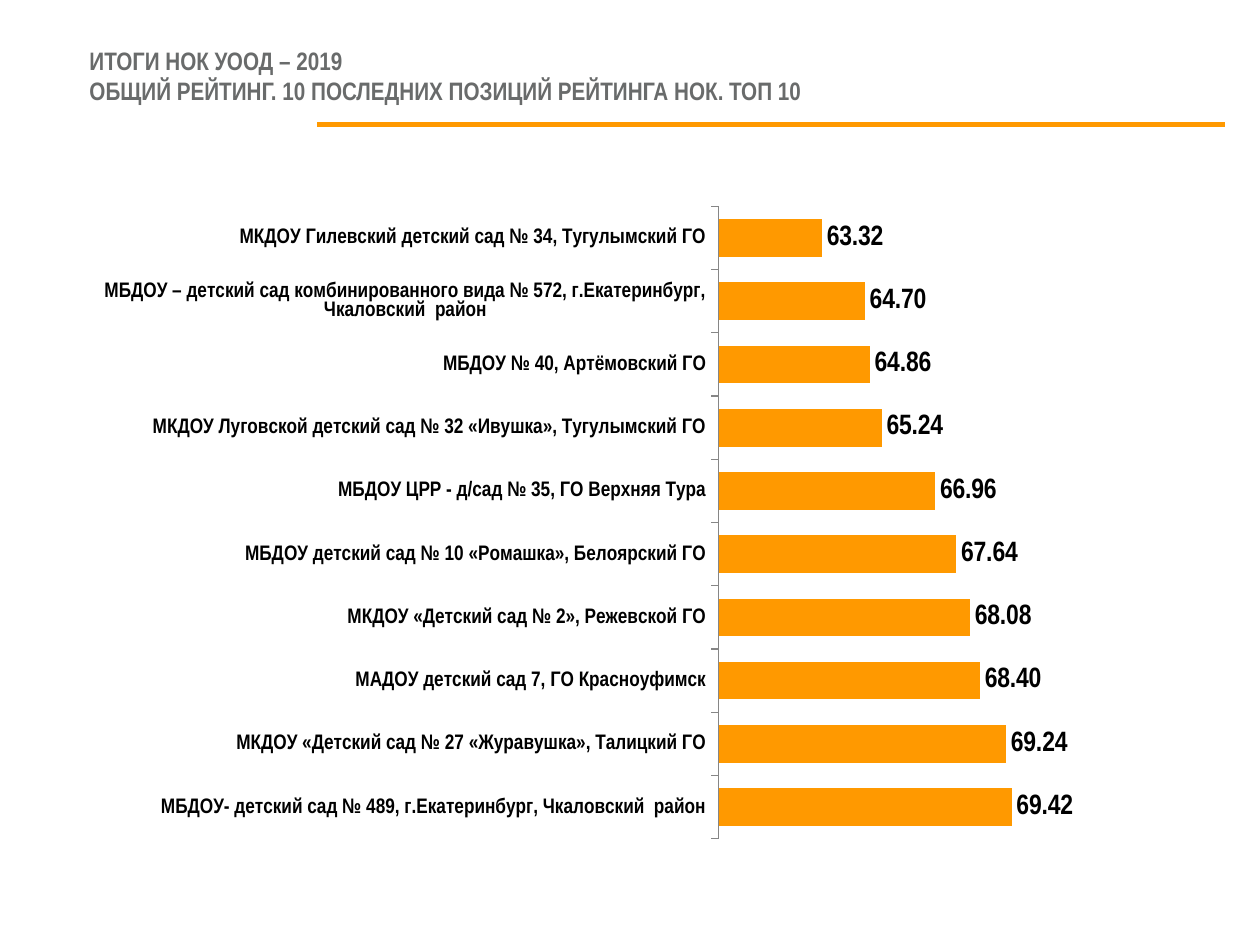
from dataclasses import dataclass

from lxml.etree import SubElement
from pptx import Presentation
from pptx.chart.data import CategoryChartData
from pptx.dml.color import RGBColor
from pptx.enum.chart import XL_CHART_TYPE, XL_LABEL_POSITION, XL_TICK_LABEL_POSITION, XL_TICK_MARK
from pptx.enum.shapes import MSO_CONNECTOR
from pptx.enum.text import MSO_ANCHOR, MSO_AUTO_SIZE, PP_ALIGN
from pptx.oxml import parse_xml
from pptx.oxml.ns import nsdecls, qn
from pptx.util import Inches, Pt


@dataclass(frozen=True)
class Theme:
    """Colours, font and type sizes of the slide."""
    font: str = "Arial Narrow"
    accent: str = "FF9900"
    heading: str = "696B6B"
    text: str = "000000"
    axis: str = "868686"
    title_size: float = 14.4
    chart_size: float = 14
    category_size: float = 12
    value_size: float = 16


THEME = Theme()
TITLE_LINES = (
    "ИТОГИ НОК УООД – 2019",
    "ОБЩИЙ РЕЙТИНГ. 10 ПОСЛЕДНИХ ПОЗИЦИЙ РЕЙТИНГА НОК. ТОП 10",
)
RATINGS = (
    ("МКДОУ Гилевский детский сад № 34, Тугулымский ГО", 63.32),
    ("МБДОУ – детский сад комбинированного вида № 572, г.Екатеринбург, Чкаловский  район", 64.70),
    ("МБДОУ № 40, Артёмовский ГО", 64.86),
    ("МКДОУ Луговской детский сад № 32 «Ивушка», Тугулымский ГО", 65.24),
    ("МБДОУ ЦРР - д/сад № 35, ГО Верхняя Тура", 66.96),
    ("МБДОУ детский сад № 10 «Ромашка», Белоярский ГО", 67.64),
    ("МКДОУ «Детский сад № 2», Режевской ГО", 68.08),
    ("МАДОУ детский сад 7, ГО Красноуфимск", 68.40),
    ("МКДОУ «Детский сад № 27 «Журавушка», Талицкий ГО", 69.24),
    ("МБДОУ- детский сад № 489, г.Екатеринбург, Чкаловский  район", 69.42),
)


def format_font(font, size, color=THEME.text, bold=False):
    """Apply the theme font with the given size, colour and weight."""
    font.name = THEME.font
    font.size = Pt(size)
    font.bold = bold
    font.color.rgb = RGBColor.from_string(color)


def write_text(para, text, **style):
    """Write text into a left-aligned paragraph and format its runs."""
    para.text = text
    para.alignment = PP_ALIGN.LEFT
    for span in para.runs:
        format_font(span.font, **style)


def add_title(page):
    """Place the two-line heading in the title placeholder."""
    box = page.shapes.title
    box.left, box.top, box.width, box.height = map(Inches, (0.61, 0.43, 9, 0.57))
    frame = box.text_frame
    frame.word_wrap = True
    frame.auto_size = MSO_AUTO_SIZE.NONE
    frame.vertical_anchor = MSO_ANCHOR.MIDDLE
    frame.margin_top, frame.margin_bottom = 0, Inches(0.23)
    write_text(frame.paragraphs[0], "\v".join(TITLE_LINES),
               size=THEME.title_size, color=THEME.heading, bold=True)


def add_rule(page, left, right, top):
    """Draw a horizontal accent line."""
    rule = page.shapes.add_connector(
        MSO_CONNECTOR.STRAIGHT, Inches(left), Inches(top), Inches(right), Inches(top))
    rule.line.color.rgb = RGBColor.from_string(THEME.accent)
    rule.line.width = Pt(3)
    SubElement(rule._element.spPr, qn("a:effectLst"))


def set_plot_area(chart, **fractions):
    """Fix the inner plot area as fractions of the chart."""
    places = "".join(f'<c:{name} val="{value}"/>' for name, value in fractions.items())
    layout = parse_xml(
        f'<c:layout {nsdecls("c")}><c:manualLayout><c:layoutTarget val="inner"/>'
        f'<c:xMode val="edge"/><c:yMode val="edge"/>{places}</c:manualLayout></c:layout>')
    area = chart._chartSpace.chart.plotArea
    for old in area.findall(qn("c:layout")):
        area.remove(old)
    area.insert(0, layout)


def format_axes(chart):
    """Show categories from the top down and hide the value axis."""
    categories, values = chart.category_axis, chart.value_axis
    categories.reverse_order = True
    categories.major_tick_mark = XL_TICK_MARK.OUTSIDE
    categories.tick_label_position = XL_TICK_LABEL_POSITION.NEXT_TO_AXIS
    categories.format.line.color.rgb = RGBColor.from_string(THEME.axis)
    categories.format.line.width = Pt(0.75)
    format_font(categories.tick_labels.font, THEME.category_size, bold=True)
    values.minimum_scale, values.maximum_scale, values.major_unit = 60, 75, 10
    values.has_major_gridlines = False
    values.visible = False


def add_rating_chart(page):
    """Add the bar chart of kindergarten ratings."""
    data = CategoryChartData(number_format="#,##0.00")
    names, scores = zip(*RATINGS)
    data.categories = names
    data.add_series("Series 1", scores)
    chart = page.shapes.add_chart(
        XL_CHART_TYPE.BAR_CLUSTERED, *map(Inches, (0.12, 1.39, 9.37, 5.51)), data).chart
    chart.has_legend = False
    chart.has_title = False
    format_font(chart.font, THEME.chart_size)
    format_axes(chart)
    plot = chart.plots[0]
    plot.gap_width = 68
    plot.vary_by_categories = False
    bars = plot.series[0]
    bars.format.fill.solid()
    bars.format.fill.fore_color.rgb = RGBColor.from_string(THEME.accent)
    labels = bars.data_labels
    labels.show_value = True
    labels.number_format, labels.number_format_is_linked = "#,##0.00", False
    labels.position = XL_LABEL_POSITION.OUTSIDE_END
    format_font(labels.font, THEME.value_size, bold=True)
    set_plot_area(chart, x=0.596, y=0.045, w=0.395, h=0.911)


def main():
    """Build and save the slide."""
    deck = Presentation()
    deck.slide_width, deck.slide_height = Inches(10), Inches(7.5)
    page = deck.slides.add_slide(deck.slide_layouts[5])
    add_title(page)
    add_rule(page, left=2.52, right=9.72, top=0.99)
    add_rating_chart(page)
    deck.save("out.pptx")


if __name__ == "__main__":
    main()
